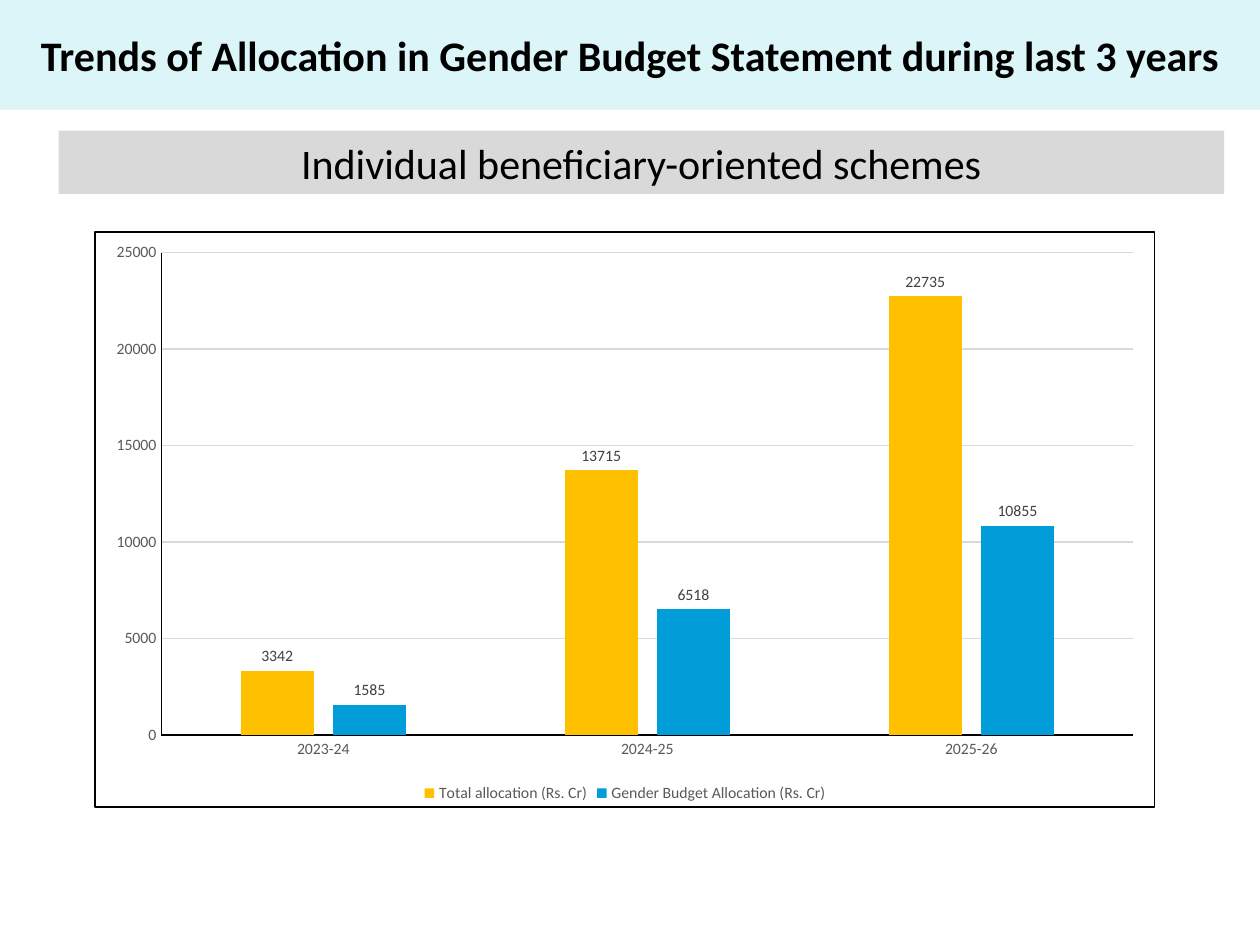
from dataclasses import dataclass

import pptx
import pptx.chart.data
import pptx.dml.color
import pptx.enum.chart
import pptx.enum.shapes
import pptx.enum.text
import pptx.oxml
import pptx.oxml.ns
import pptx.util

RGBColor = pptx.dml.color.RGBColor
BLACK = RGBColor(0x00, 0x00, 0x00)
PALE_AQUA = RGBColor(0xDB, 0xF5, 0xF9)
LIGHT_GREY = RGBColor(0xD9, 0xD9, 0xD9)
AXIS_GREY = RGBColor(0x59, 0x59, 0x59)
LABEL_GREY = RGBColor(0x40, 0x40, 0x40)
AMBER = RGBColor(0xFF, 0xC0, 0x00)
BLUE = RGBColor(0x00, 0x9D, 0xD9)

FONT = "Calibri"
SLIDE_WIDTH = pptx.util.Inches(10)
SLIDE_HEIGHT = pptx.util.Inches(7.5)


@dataclass(frozen=True)
class Area:
    left: float
    top: float
    width: float
    height: float

    def box(self) -> tuple[int, int, int, int]:
        return (
            int(SLIDE_WIDTH * self.left / 100),
            int(SLIDE_HEIGHT * self.top / 100),
            int(SLIDE_WIDTH * self.width / 100),
            int(SLIDE_HEIGHT * self.height / 100),
        )


@dataclass(frozen=True)
class Banner:
    area: Area
    wording: str
    fill: RGBColor
    bold: bool


@dataclass(frozen=True)
class Allocation:
    name: str
    amounts: tuple[int, ...]
    color: RGBColor


BANNERS = (
    Banner(Area(0, 0, 100, 11.6),
           "Trends of Allocation in Gender Budget Statement during last 3 years",
           PALE_AQUA, True),
    Banner(Area(4.65, 13.83, 92.5, 6.7),
           "Individual beneficiary-oriented schemes", LIGHT_GREY, False),
)
CHART_AREA = Area(7.5, 24.45, 84.2, 61.07)
YEARS = ("2023-24", "2024-25", "2025-26")
ALLOCATIONS = (
    Allocation("Total allocation (Rs. Cr)", (3342, 13715, 22735), AMBER),
    Allocation("Gender Budget Allocation (Rs. Cr)", (1585, 6518, 10855), BLUE),
)


def style_font(font, size: float, color: RGBColor, bold: bool = False) -> None:
    font.name = FONT
    font.size = pptx.util.Pt(size)
    font.bold = bold
    font.color.rgb = color


def style_line(line, color: RGBColor) -> None:
    line.color.rgb = color
    line.width = pptx.util.Pt(0.75)


def draw_banner(slide, banner: Banner) -> None:
    panel = slide.shapes.add_shape(
        pptx.enum.shapes.MSO_SHAPE.RECTANGLE, *banner.area.box())
    panel.shadow.inherit = False
    panel.fill.solid()
    panel.fill.fore_color.rgb = banner.fill
    panel.line.fill.background()
    frame = panel.text_frame
    frame.word_wrap = True
    frame.vertical_anchor = pptx.enum.text.MSO_ANCHOR.MIDDLE
    frame.text = banner.wording
    heading = frame.paragraphs[0]
    heading.alignment = pptx.enum.text.PP_ALIGN.CENTER
    style_font(heading.runs[0].font, 24, BLACK, banner.bold)


def style_axis(axis) -> None:
    axis.major_tick_mark = pptx.enum.chart.XL_TICK_MARK.NONE
    axis.minor_tick_mark = pptx.enum.chart.XL_TICK_MARK.NONE
    style_font(axis.tick_labels.font, 9, AXIS_GREY)
    style_line(axis.format.line, BLACK)


def style_series(series, allocation: Allocation) -> None:
    series.format.fill.solid()
    series.format.fill.fore_color.rgb = allocation.color
    series.invert_if_negative = False
    labels = series.data_labels
    labels.show_value = True
    labels.position = pptx.enum.chart.XL_LABEL_POSITION.OUTSIDE_END
    style_font(labels.font, 9, LABEL_GREY)


def add_border(chart) -> None:
    border = pptx.oxml.parse_xml(
        f'<c:spPr {pptx.oxml.ns.nsdecls("c", "a")}><a:noFill/>'
        f'<a:ln w="{pptx.util.Pt(1)}"><a:solidFill><a:srgbClr val="{BLACK}"/>'
        '</a:solidFill></a:ln></c:spPr>')
    chart.element.find(pptx.oxml.ns.qn("c:chart")).addnext(border)


def draw_chart(slide) -> None:
    budget = pptx.chart.data.CategoryChartData()
    budget.categories = YEARS
    for allocation in ALLOCATIONS:
        budget.add_series(allocation.name, allocation.amounts)
    chart = slide.shapes.add_chart(
        pptx.enum.chart.XL_CHART_TYPE.COLUMN_CLUSTERED,
        *CHART_AREA.box(), budget).chart
    style_font(chart.font, 10, BLACK)
    chart.has_title = False
    chart.has_legend = True
    chart.legend.position = pptx.enum.chart.XL_LEGEND_POSITION.BOTTOM
    chart.legend.include_in_layout = False
    style_font(chart.legend.font, 9, AXIS_GREY)

    columns = chart.plots[0]
    columns.vary_by_categories = False
    columns.gap_width = 219
    columns.overlap = -27
    for series, allocation in zip(columns.series, ALLOCATIONS):
        style_series(series, allocation)

    style_axis(chart.category_axis)
    style_axis(chart.value_axis)
    chart.value_axis.minimum_scale = 0
    chart.value_axis.maximum_scale = 25000
    chart.value_axis.major_unit = 5000
    style_line(chart.value_axis.major_gridlines.format.line, LIGHT_GREY)
    add_border(chart)


def main() -> None:
    deck = pptx.Presentation()
    deck.slide_width = SLIDE_WIDTH
    deck.slide_height = SLIDE_HEIGHT
    slide = deck.slides.add_slide(deck.slide_layouts[6])
    for banner in BANNERS:
        draw_banner(slide, banner)
    draw_chart(slide)
    deck.save("out.pptx")


if __name__ == "__main__":
    main()
